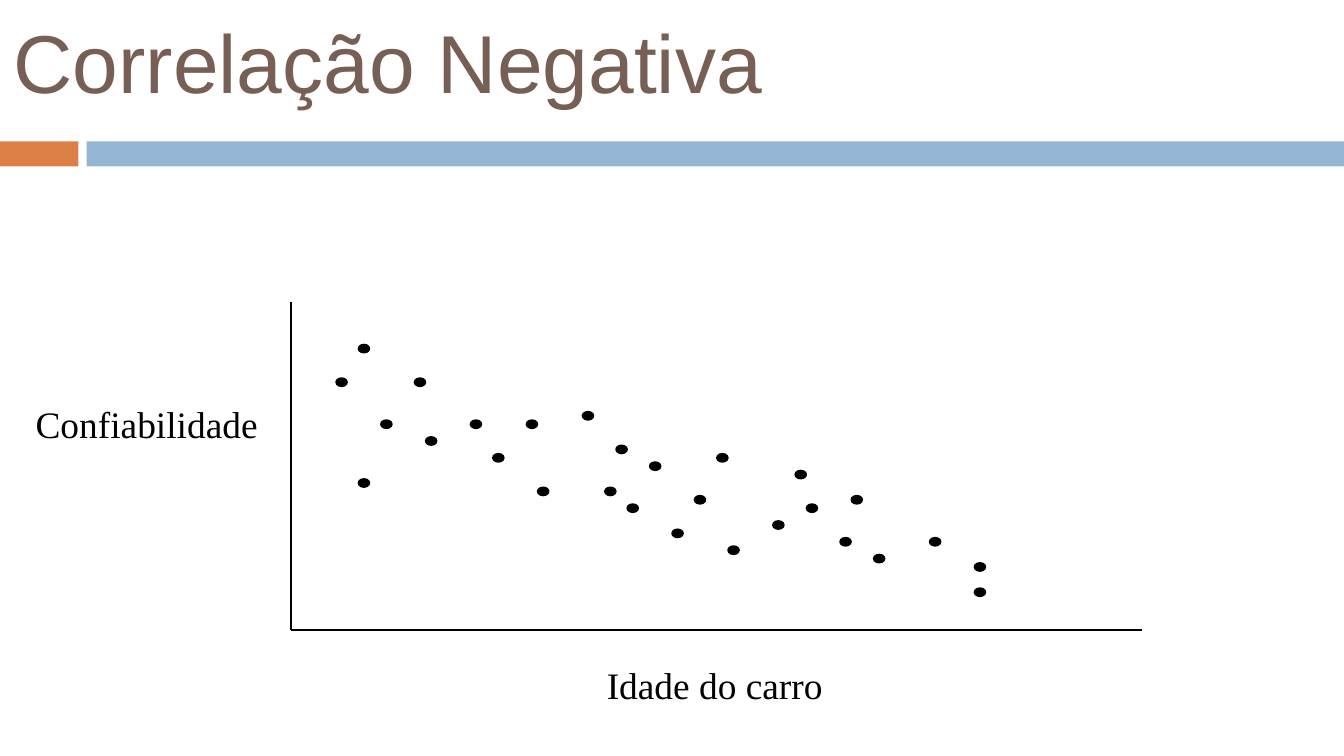
from lxml.etree import SubElement
from pptx import Presentation
from pptx.dml.color import RGBColor
from pptx.enum.shapes import MSO_CONNECTOR, MSO_SHAPE
from pptx.enum.text import MSO_ANCHOR, MSO_AUTO_SIZE, PP_ALIGN
from pptx.oxml.ns import qn
from pptx.util import Pt

PX = 9525  # EMU in one px, 96 px to the inch
COL, ROW = 8, 6  # px steps of the scatter grid; a dot fills one cell
BLACK = "000000"

# (column, row) of each car, counted from the top of the vertical axis
CARS = [
    (4, 9), (6, 5), (6, 21), (8, 14), (11, 9), (12, 16), (16, 14),
    (18, 18), (21, 14), (22, 22), (26, 13), (28, 22), (29, 17), (30, 24),
    (32, 19), (34, 27), (36, 23), (38, 18), (39, 29), (43, 26), (45, 20),
    (46, 24), (49, 28), (50, 23), (52, 30), (57, 28), (61, 31), (61, 34),
]


def px(*lengths):
    return [length * PX for length in lengths]


def color(hex_string):
    return RGBColor.from_string(hex_string)


def style_text(frame, text, font_name, size, hex_string):
    frame.text = text
    paragraph = frame.paragraphs[0]
    paragraph.alignment = PP_ALIGN.LEFT
    font = paragraph.font
    font.name, font.size = font_name, Pt(size)
    font.color.rgb = color(hex_string)


def add_filled(slide, kind, box, fill, outline=None):
    shape = slide.shapes.add_shape(kind, *px(*box))
    shape.shadow.inherit = False
    shape.fill.solid()
    shape.fill.fore_color.rgb = color(fill)
    if outline:
        shape.line.color.rgb = color(outline)
        shape.line.width = Pt(0.75)
    else:
        shape.line.fill.background()


def add_axis(slide, start, end):
    axis = slide.shapes.add_connector(MSO_CONNECTOR.STRAIGHT, *px(*start, *end))
    axis.line.color.rgb = color(BLACK)
    axis.line.width = Pt(0.75)
    SubElement(axis.element.spPr, qn("a:effectLst"))


def add_label(slide, box, text):
    frame = slide.shapes.add_textbox(*px(*box)).text_frame
    frame.word_wrap = False
    frame.auto_size = MSO_AUTO_SIZE.SHAPE_TO_FIT_TEXT
    style_text(frame, text, "Times New Roman", 20, BLACK)


def add_title(slide, box, text):
    title = slide.shapes.title
    title.left, title.top, title.width, title.height = px(*box)
    frame = title.text_frame
    frame.vertical_anchor = MSO_ANCHOR.MIDDLE
    style_text(frame, text, "Arial", 44, "775F55")


def add_band(slide, box):
    left, top, width, height = box
    accent, gap = 56, 6
    rest = accent + gap
    add_filled(slide, MSO_SHAPE.RECTANGLE, (left, top, accent, height), "DD8047")
    add_filled(slide, MSO_SHAPE.RECTANGLE,
               (left + rest, top, width - rest, height), "94B6D2")


def add_scatter(slide, box):
    """Draw axes along the left and bottom of the box, labels outside, dots inside."""
    left, top, width, height = box
    origin = (left, top + height)
    add_axis(slide, (left, top), origin)
    add_axis(slide, origin, (left + width, top + height))
    add_label(slide, (left - 192, top + 66, 179, 42), "Confiabilidade")
    add_label(slide, (left + 216, top + height + 18, 175, 42), "Idade do carro")
    for column, row in CARS:
        dot = (left + column * COL, top + row * ROW, COL, ROW)
        add_filled(slide, MSO_SHAPE.OVAL, dot, BLACK, BLACK)


def main():
    deck = Presentation()
    deck.slide_width, deck.slide_height = px(960, 540)
    slide = deck.slides.add_slide(deck.slide_layouts[5])
    add_band(slide, (0, 101, 960, 18))
    add_scatter(slide, (208, 216, 76 * COL, 39 * ROW))
    add_title(slide, (0, -2, 960, 90), "Correlação Negativa")
    deck.save("out.pptx")


if __name__ == "__main__":
    main()
